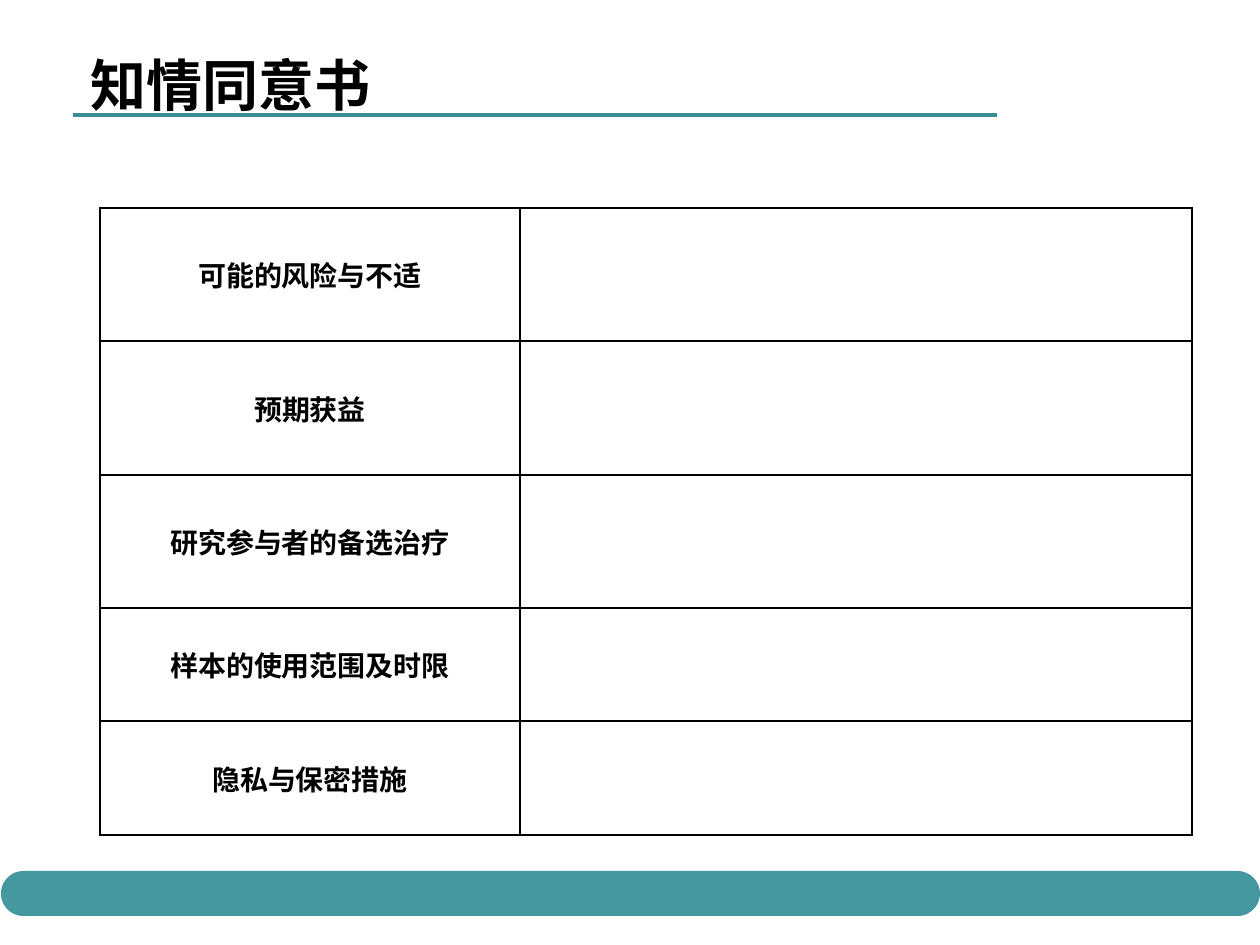
from pptx import Presentation
from pptx.dml.color import RGBColor
from pptx.enum.shapes import MSO_CONNECTOR, MSO_SHAPE
from pptx.enum.text import MSO_ANCHOR, PP_ALIGN
from pptx.oxml.ns import qn
from pptx.util import Emu, Inches, Pt
from lxml import etree

LEFT, CENTER = PP_ALIGN.LEFT, PP_ALIGN.CENTER
MIDDLE = MSO_ANCHOR.MIDDLE
STRAIGHT = MSO_CONNECTOR.STRAIGHT
ROUNDED = MSO_SHAPE.ROUNDED_RECTANGLE
TITLE_ONLY = 5

BLACK = RGBColor(0x00, 0x00, 0x00)
BAR_TEAL = RGBColor(0x45, 0x97, 0xA0)
RULE_TEAL = RGBColor(0x3C, 0x8C, 0x93)
FONT = "Noto Sans CJK SC"
EMU_PER_PX = 914400 / 126

TOPICS = ["可能的风险与不适", "预期获益", "研究参与者的备选治疗",
          "样本的使用范围及时限", "隐私与保密措施"]
SPACER_HEIGHT = 78
TOPIC_HEIGHTS = [133, 134, 133, 113, 114]
COLUMN_WIDTHS = [420, 672]


def px(length):
    return Emu(round(length * EMU_PER_PX))


def write_text(text_frame, text, size, align=LEFT, bold=True, color=BLACK, indent=0):
    paragraph = text_frame.paragraphs[0]
    paragraph.alignment = align
    if indent:
        properties = paragraph._p.get_or_add_pPr()
        properties.set("marL", str(px(indent)))
        properties.set("indent", "0")
    run = paragraph.add_run()
    run.text = text
    run.font.size = Pt(size)
    run.font.bold = bold
    run.font.color.rgb = color
    run.font.name = FONT
    east_asian = etree.Element(qn("a:ea"), typeface=FONT)
    run.font._element.find(qn("a:latin")).addnext(east_asian)


def set_borders(cell, visible_sides):
    """Draw the named sides (L, R, T, B) in black and hide the others."""
    properties = cell._tc.get_or_add_tcPr()
    for position, side in enumerate("LRTB"):
        border = etree.Element(qn(f"a:ln{side}"), w=str(Pt(1)))
        if side in visible_sides:
            fill = etree.SubElement(border, qn("a:solidFill"))
            etree.SubElement(fill, qn("a:srgbClr"), val=str(BLACK))
        else:
            etree.SubElement(border, qn("a:noFill"))
        properties.insert(position, border)


class SlideBuilder:
    def __init__(self, slide):
        self.slide = slide

    def title(self, text, left, top, width, height):
        shape = self.slide.shapes.title
        shape.left, shape.top = px(left), px(top)
        shape.width, shape.height = px(width), px(height)
        shape.text_frame.vertical_anchor = MIDDLE
        write_text(shape.text_frame, text, size=32, indent=25)

    def topic_table(self, topics, left, top, widths, heights):
        frame = self.slide.shapes.add_table(
            len(heights), len(widths), px(left), px(top), px(sum(widths)), px(sum(heights)))
        table = frame.table
        table.first_row = table.horz_banding = False
        for column, width in zip(table.columns, widths):
            column.width = px(width)
        for row, height in zip(table.rows, heights):
            row.height = px(height)
        table.cell(0, 0).merge(table.cell(0, len(widths) - 1))
        for row_index, row in enumerate(table.rows):
            for cell in row.cells:
                cell.fill.background()
                set_borders(cell, "LRTB" if row_index else "B")
        for row_index, topic in enumerate(topics, start=1):
            cell = table.cell(row_index, 0)
            cell.vertical_anchor = MIDDLE
            write_text(cell.text_frame, topic, size=16, align=CENTER)

    def rounded_bar(self, left, top, width, height, color):
        shape = self.slide.shapes.add_shape(ROUNDED, px(left), px(top), px(width), px(height))
        shape.adjustments[0] = 0.5
        shape.shadow.inherit = False
        shape.fill.solid()
        shape.fill.fore_color.rgb = color
        shape.line.fill.background()

    def rule(self, left, right, y, color, weight):
        line = self.slide.shapes.add_connector(STRAIGHT, px(left), px(y), px(right), px(y))
        line.line.color.rgb = color
        line.line.width = Pt(weight)
        etree.SubElement(line._element.spPr, qn("a:effectLst"))


def main():
    presentation = Presentation()
    presentation.slide_width, presentation.slide_height = Inches(10), Inches(7.5)
    slide = presentation.slides.add_slide(presentation.slide_layouts[TITLE_ONLY])
    builder = SlideBuilder(slide)

    # Heading
    builder.title("知情同意书", 53, 42, 1029, 84)

    # Consent topics, below an open spacer row
    builder.topic_table(TOPICS, 100, 130, COLUMN_WIDTHS, [SPACER_HEIGHT] + TOPIC_HEIGHTS)

    # Footer bar and heading rule
    builder.rounded_bar(1, 871, 1259, 45, BAR_TEAL)
    builder.rule(73, 997, 115, RULE_TEAL, 2.25)

    presentation.save("out.pptx")


if __name__ == "__main__":
    main()
